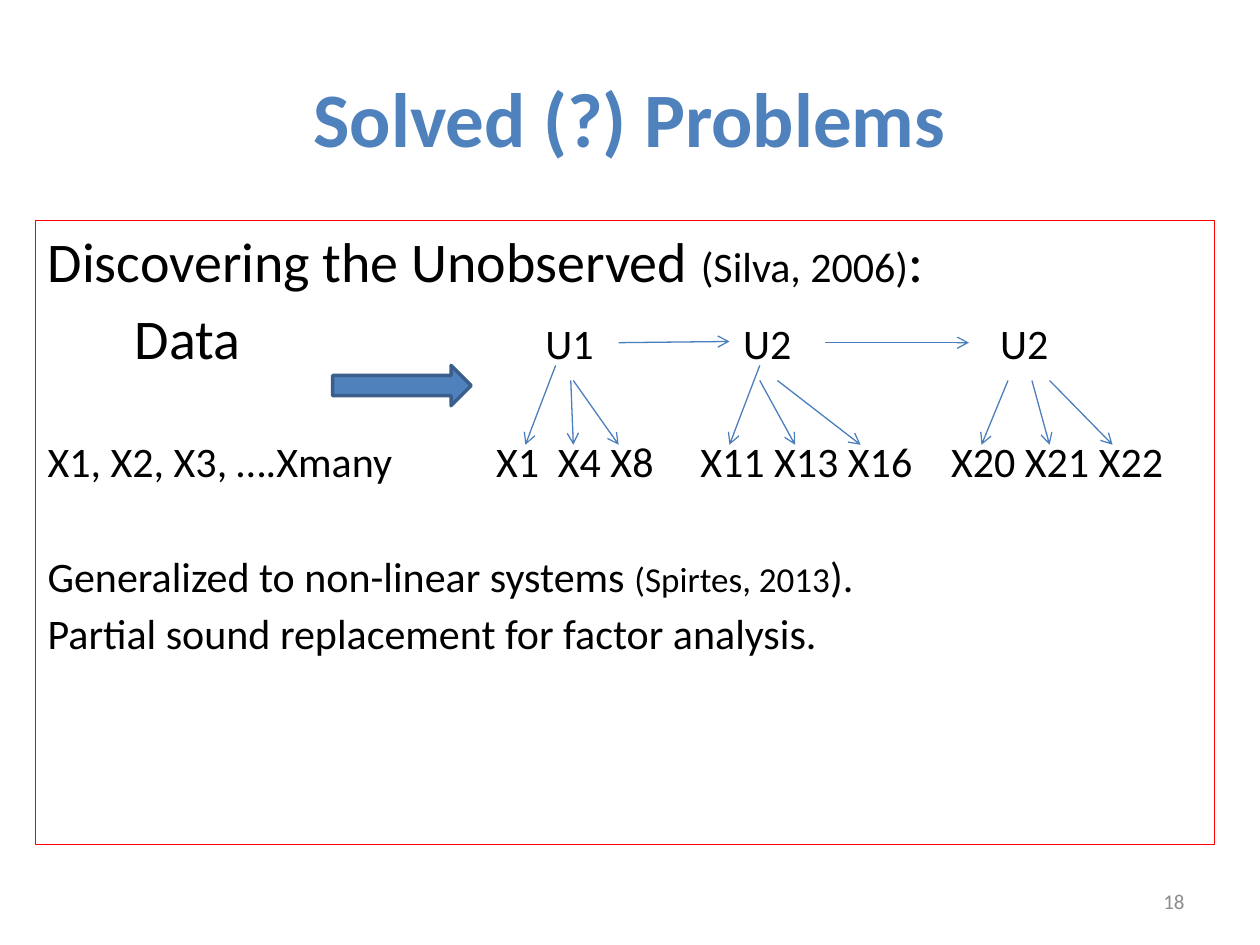
from collections import namedtuple

from lxml.etree import SubElement
from pptx import Presentation
from pptx.dml.color import RGBColor
from pptx.enum.shapes import MSO_CONNECTOR as Connector, MSO_SHAPE as Preset
from pptx.enum.text import MSO_ANCHOR as Anchor, PP_ALIGN as Align
from pptx.oxml.ns import qn
from pptx.util import Inches, Pt

Box = namedtuple("Box", "left top width height")

COLUMNS, ROWS = 100, 75
SLIDE_WIDTH, SLIDE_HEIGHT = Inches(10), Inches(7.5)
FONT = "Calibri"
BLUE = RGBColor(0x4F, 0x81, 0xBD)
ARROW_BLUE = RGBColor(0x4B, 0x7E, 0xBC)
DARK_BLUE = RGBColor(0x3A, 0x5F, 0x8C)
RED = RGBColor(0xFF, 0x00, 0x00)
BLACK = RGBColor(0x00, 0x00, 0x00)
GREY = RGBColor(0x8C, 0x8C, 0x8C)

TITLE_BOX = Box(5, 3, 90, 12.5)
BODY_BOX = Box(2.8, 17.5, 93.6, 49.5)
NUMBER_BOX = Box(71.7, 69.5, 23.3, 4)
MODEL_BOX = Box(41.7, 27.1, 46.6, 8.2)
DISCOVERY_BOX = Box(26.4, 29, 11, 3.2)

STATEMENTS = [
    (5.5, (), [("Discovering the Unobserved ", 32), ("(Silva, 2006)", 24), (":", 32)]),
    (5.5, (6.9, 39.5, 55.2, 75.6), [("\tData", 32), ("\tU1\tU2\tU2", 24)]),
    (36.9, (35.6, 40.5, 51.8, 71.7),
     [("X1, X2, X3, ….Xmany\tX1\tX4 X8\tX11 X13 X16\tX20 X21 X22", 24)]),
    (36.9, (), [("Generalized to non-linear systems ", 24), ("(Spirtes, 2013", 20), (").", 24)]),
    (3.8, (), [("Partial sound replacement for factor analysis.", 24)]),
]

INDICATOR_ARROWS = [
    (2.4, 1.9, 0), (3.6, 3.1, 3.8), (3.8, 3.1, 7.4),
    (18.6, 1.9, 16.2), (18.6, 3.1, 21.4), (20, 3.1, 26.6),
    (38.3, 3.1, 36.2), (40.2, 3.1, 41.6), (41.6, 3.1, 46.6),
]
FACTOR_ARROWS = [(7.4, 0.1, 16.2, 0), (23.8, 0.1, 35.2, 0.1)]


def across(columns):
    """Turn grid columns into a horizontal length."""
    return round(SLIDE_WIDTH * columns / COLUMNS)


def down(rows):
    """Turn grid rows into a vertical length."""
    return round(SLIDE_HEIGHT * rows / ROWS)


def place(box):
    """Turn a grid box into left, top, width and height."""
    return across(box.left), down(box.top), across(box.width), down(box.height)


def style(font, size, color, bold=False):
    """Set the look of one piece of text."""
    font.name, font.size, font.bold = FONT, Pt(size), bold
    font.color.rgb = color


def add_label(slide, box, wording, align, size, color, bold=False):
    """Place one line of text, centred vertically in its box."""
    frame = slide.shapes.add_textbox(*place(box)).text_frame
    frame.word_wrap = True
    frame.vertical_anchor = Anchor.MIDDLE
    line = frame.paragraphs[0]
    line.text, line.alignment = wording, align
    style(line.runs[0].font, size, color, bold)


def set_tabs(paragraph, stops):
    """Give a paragraph left tab stops at the given columns."""
    tabs = SubElement(paragraph._p.get_or_add_pPr(), qn("a:tabLst"))
    for stop in stops:
        SubElement(tabs, qn("a:tab"), pos=str(across(stop)), algn="l")


def add_body(slide, box):
    """Place the framed statements about unobserved variables."""
    panel = slide.shapes.add_shape(Preset.RECTANGLE, *place(box))
    panel.shadow.inherit = False
    panel.fill.background()
    panel.line.color.rgb, panel.line.width = RED, Pt(0.75)
    frame = panel.text_frame
    frame.word_wrap = True
    frame.vertical_anchor = Anchor.TOP
    for index, (gap, stops, pieces) in enumerate(STATEMENTS):
        statement = frame.add_paragraph() if index else frame.paragraphs[0]
        statement.alignment = Align.LEFT
        statement.space_before = Pt(gap)
        if stops:
            set_tabs(statement, stops)
        for wording, size in pieces:
            piece = statement.add_run()
            piece.text = wording
            style(piece.font, size, BLACK)


def add_cause(slide, box, start_x, start_y, end_x, end_y):
    """Draw one causal arrow between two points of the model box."""
    cause = slide.shapes.add_connector(
        Connector.STRAIGHT,
        across(box.left + start_x), down(box.top + start_y),
        across(box.left + end_x), down(box.top + end_y))
    cause.line.color.rgb, cause.line.width = ARROW_BLUE, Pt(0.75)
    SubElement(cause.line._get_or_add_ln(), qn("a:tailEnd"), type="arrow")
    SubElement(cause._element.spPr, qn("a:effectLst"))


def add_model(slide, box):
    """Draw the arrows from factors to indicators and between factors."""
    for start_x, start_y, end_x in INDICATOR_ARROWS:
        add_cause(slide, box, start_x, start_y, end_x, box.height)
    for ends in FACTOR_ARROWS:
        add_cause(slide, box, *ends)


def add_discovery(slide, box):
    """Draw the block arrow from the data to the model."""
    discovery = slide.shapes.add_shape(Preset.RIGHT_ARROW, *place(box))
    discovery.shadow.inherit = False
    discovery.fill.solid()
    discovery.fill.fore_color.rgb = BLUE
    discovery.line.color.rgb, discovery.line.width = DARK_BLUE, Pt(2)


def main():
    """Build and save the slide."""
    deck = Presentation()
    deck.slide_width, deck.slide_height = SLIDE_WIDTH, SLIDE_HEIGHT
    slide = deck.slides.add_slide(deck.slide_layouts[6])
    add_label(slide, TITLE_BOX, "Solved (?) Problems", Align.CENTER, 44, BLUE, bold=True)
    add_body(slide, BODY_BOX)
    add_label(slide, NUMBER_BOX, "18", Align.RIGHT, 12, GREY)
    add_model(slide, MODEL_BOX)
    add_discovery(slide, DISCOVERY_BOX)
    deck.save("out.pptx")


if __name__ == "__main__":
    main()
